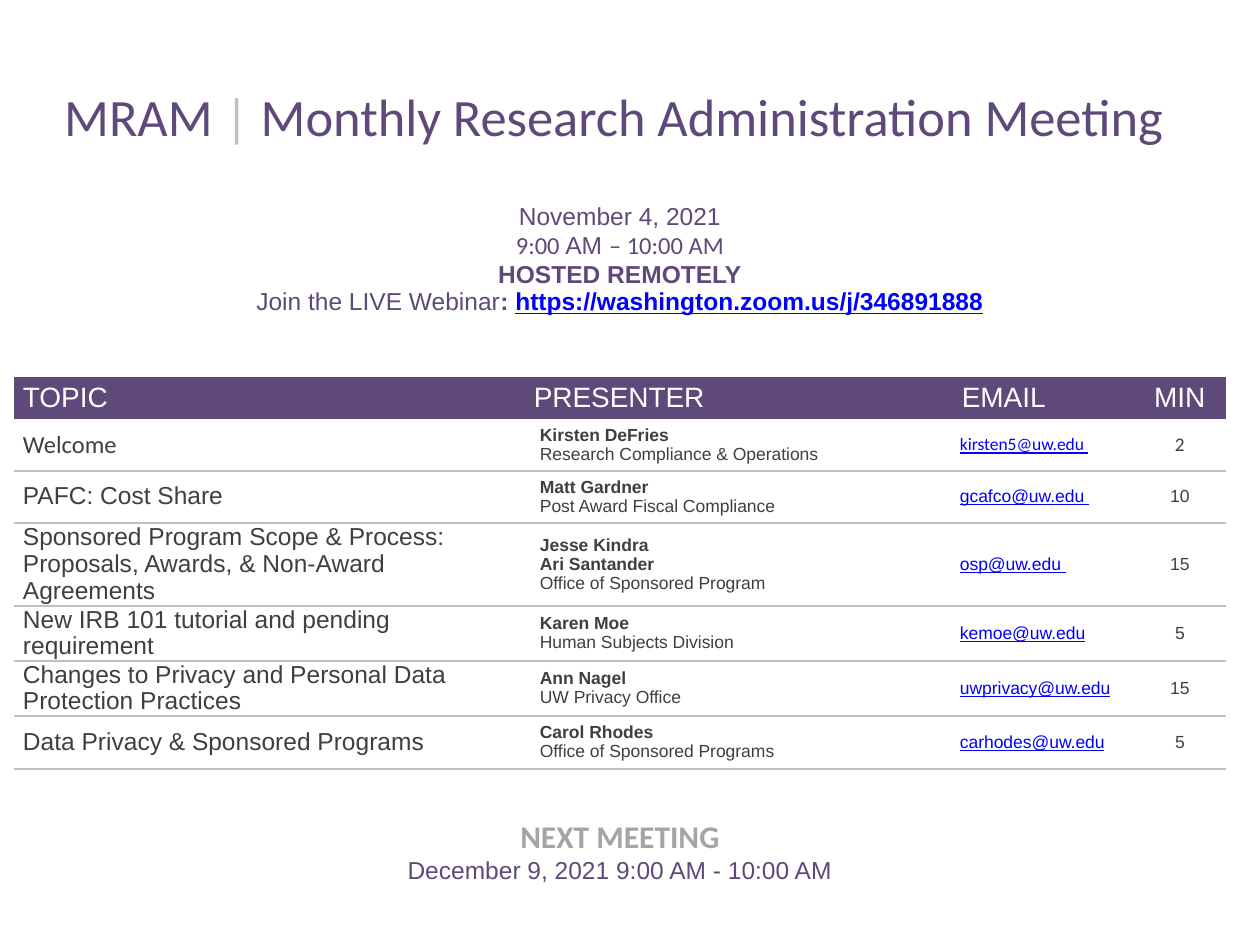
from lxml.etree import SubElement
from pptx import Presentation
from pptx.dml.color import RGBColor
from pptx.enum.text import MSO_ANCHOR, PP_ALIGN
from pptx.oxml import parse_xml
from pptx.oxml.ns import nsdecls, qn

PX = 914400 // 126
COLORS = {
    "purple": "5F497A",
    "gray": "BFBFBF",
    "silver": "A5A5A5",
    "dark": "3F3F3F",
    "link": "0000FF",
    "white": "FFFFFF",
}
NO_GRID_STYLE = "{2D5ABB26-0587-4C30-8999-92F81FD0307C}"
COLUMN_WIDTHS = [511, 420, 189, 92]
ROW_HEIGHTS = [78, 226, 42, 52, 52, 83, 55, 55, 53, 132]


def set_font(font, size=None, name=None, color=None, bold=None, underline=None):
    if size:
        font.size = size * 12700
    if name:
        font.name = name
    if color:
        font.color.rgb = RGBColor.from_string(COLORS[color])
    if bold is not None:
        font.bold = bold
    if underline is not None:
        font.underline = underline


def write_cell(cell, paragraphs, margins=(9, 0, 9, 0), fill="white", align=PP_ALIGN.LEFT,
               anchor=MSO_ANCHOR.MIDDLE, spacing=1.0):
    cell.margin_left, cell.margin_top, cell.margin_right, cell.margin_bottom = [
        margin * PX for margin in margins]
    cell.vertical_anchor = anchor
    cell.fill.solid()
    cell.fill.fore_color.rgb = RGBColor.from_string(COLORS[fill])
    frame = cell.text_frame
    for index, (spans, style) in enumerate(paragraphs):
        para = frame.add_paragraph() if index else frame.paragraphs[0]
        para.alignment = align
        para.line_spacing = spacing
        set_font(para.font, **style)
        for text, extra in spans:
            span = para.add_run()
            span.text = text
            set_font(span.font, **{**style, **extra})


deck = Presentation()
deck.slide_width = 1260 * PX
deck.slide_height = 945 * PX
page = deck.slides.add_slide(deck.slide_layouts[6])

frame = page.shapes.add_table(len(ROW_HEIGHTS), len(COLUMN_WIDTHS), 14 * PX, 73 * PX,
                              sum(COLUMN_WIDTHS) * PX, sum(ROW_HEIGHTS) * PX)
agenda = frame.table
agenda.horz_banding = False
agenda.first_row = False
agenda._tbl.tblPr.find(qn("a:tableStyleId")).text = NO_GRID_STYLE
for column, width in zip(agenda.columns, COLUMN_WIDTHS):
    column.width = width * PX
for row, height in zip(agenda.rows, ROW_HEIGHTS):
    row.height = height * PX
for row in (0, 1, 9):
    agenda.cell(row, 0).merge(agenda.cell(row, 3))

title_style = dict(size=30, name="Calibri")
purple = dict(color="purple")
write_cell(agenda.cell(0, 0), [
    ([("MRAM ", purple), ("|", dict(color="gray")),
      (" Monthly Research Administration Meeting ", purple)], title_style),
], align=PP_ALIGN.CENTER, anchor=MSO_ANCHOR.BOTTOM)

event = dict(size=14, name="Arial", color="purple")
calibri = dict(name="Calibri")
write_cell(agenda.cell(1, 0), [
    ([("November 4, 2021", {})], event),
    ([("9:00 ", calibri), ("AM ", {}), ("– 10:00 AM", calibri)], event),
    ([("HOSTED REMOTELY", {})], {**event, "bold": True}),
    ([("Join the LIVE Webinar", {}), (": ", dict(bold=True)),
      ("https://washington.zoom.us/j/346891888",
       dict(color="link", bold=True, underline=True))], event),
], margins=(9, 0, 9, 61), align=PP_ALIGN.CENTER, anchor=MSO_ANCHOR.BOTTOM)

header = dict(size=16, name="Arial", color="white", bold=False)
for column, (label, left, align) in enumerate([
    ("TOPIC", 9, PP_ALIGN.LEFT),
    ("PRESENTER", 9, PP_ALIGN.LEFT),
    ("EMAIL", 17, PP_ALIGN.LEFT),
    ("MIN", 9, PP_ALIGN.CENTER),
]):
    write_cell(agenda.cell(2, column), [([(label, {})], header)],
               margins=(left, 0, 9, 0), fill="purple", align=align)

sessions = [
    ("Welcome", ["Kirsten DeFries"], "Research Compliance & Operations",
     "kirsten5@uw.edu ", "2"),
    ("PAFC: Cost Share", ["Matt Gardner"], "Post Award Fiscal Compliance",
     "gcafco@uw.edu ", "10"),
    ("Sponsored Program Scope & Process: Proposals, Awards, & Non-Award Agreements",
     ["Jesse Kindra", "Ari Santander"], "Office of Sponsored Program",
     "osp@uw.edu ", "15"),
    ("New IRB 101 tutorial and pending requirement", ["Karen Moe"],
     "Human Subjects Division", "kemoe@uw.edu", "5"),
    ("Changes to Privacy and Personal Data Protection Practices", ["Ann Nagel"],
     "UW Privacy Office", "uwprivacy@uw.edu", "15"),
    ("Data Privacy & Sponsored Programs", ["Carol Rhodes"],
     "Office of Sponsored Programs", "carhodes@uw.edu", "5"),
]
for row, (topic, presenters, office, email, minutes) in enumerate(sessions, start=3):
    opening = row == 3
    face = "Calibri" if opening else "Arial"
    topic_style = dict(size=14, name=face, color="dark")
    detail = dict(size=10, name="Arial", color="dark")
    email_style = dict(size=10, name=face, color="link", underline=True)
    minutes_style = dict(size=11 if opening else 10, name=face, color="dark")
    people = [([(person, {})], {**detail, "bold": True}) for person in presenters]
    write_cell(agenda.cell(row, 0), [([(topic, {})], topic_style)], spacing=0.97)
    write_cell(agenda.cell(row, 1), people + [([(office, {})], detail)],
               margins=(15, 0, 15, 0), spacing=0.97)
    write_cell(agenda.cell(row, 2), [([(email, {})], email_style)], margins=(15, 0, 15, 0))
    write_cell(agenda.cell(row, 3), [([(minutes, {})], minutes_style)],
               align=PP_ALIGN.CENTER)
    for column in range(len(COLUMN_WIDTHS)):
        rule = parse_xml(f'<a:lnB {nsdecls("a")} w="12700"/>')
        paint = SubElement(rule, qn("a:solidFill"))
        SubElement(paint, qn("a:srgbClr"), val=COLORS["gray"])
        agenda.cell(row, column)._tc.get_or_add_tcPr().insert(0, rule)

write_cell(agenda.cell(9, 0), [
    ([("NEXT MEETING", {})], dict(size=18, name="Calibri", color="silver", bold=True)),
    ([("December 9, 2021 9:00 AM - 10:00 AM", {})], event),
], margins=(9, 50, 9, 0), align=PP_ALIGN.CENTER, anchor=MSO_ANCHOR.TOP)

deck.save("out.pptx")
